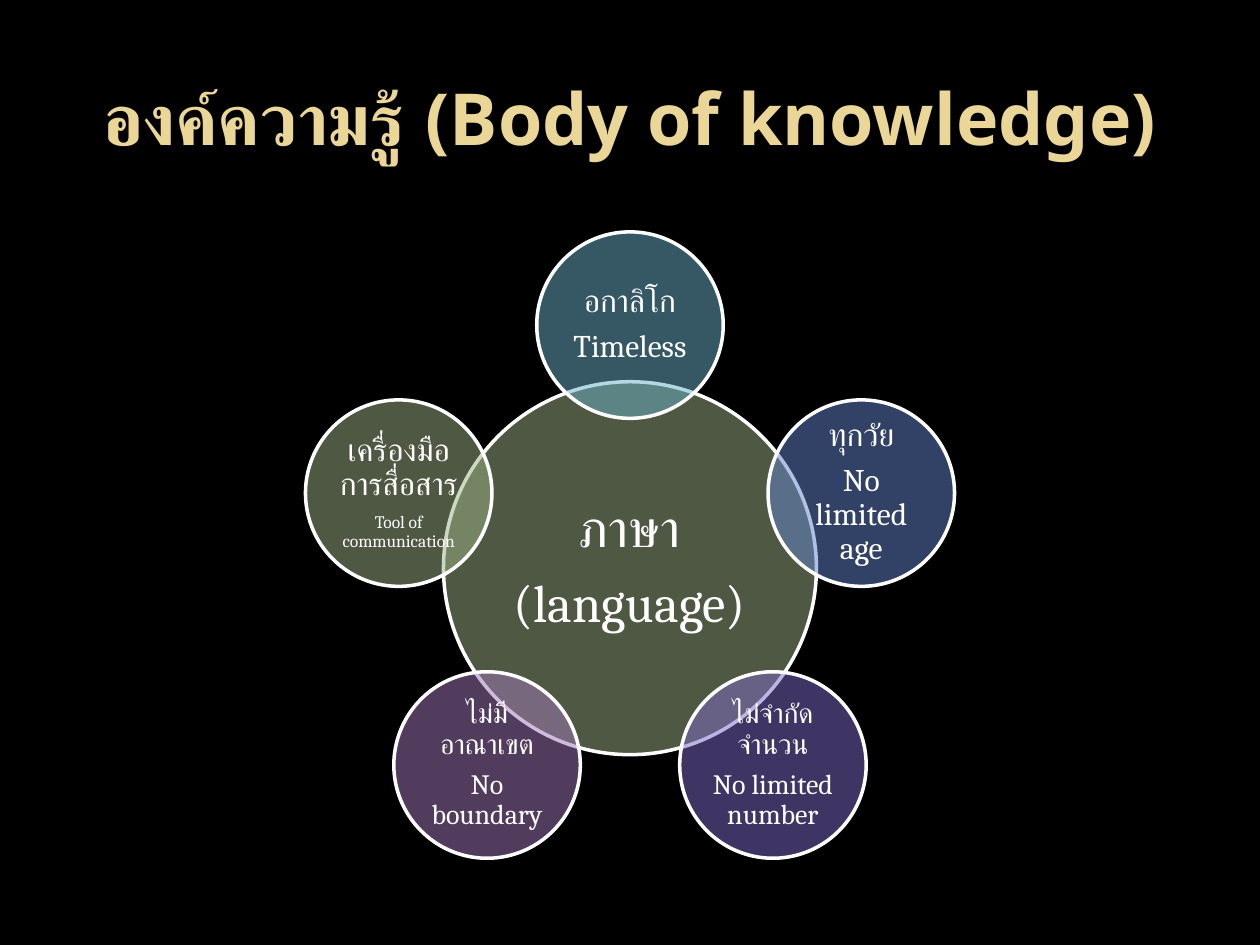
"""Build a slide with a radial Venn diagram of five qualities around language."""
import math

import pptx
import pptx.dml.color
import pptx.enum.shapes
import pptx.enum.text
import pptx.oxml.ns
import pptx.util
from lxml import etree


def color(hex_value):
    return pptx.dml.color.RGBColor.from_string(hex_value)


def write(para, text, *, size, font="Cambria", hex_value="FFFFFF", bold=False):
    para.alignment = pptx.enum.text.PP_ALIGN.CENTER
    span = para.add_run()
    span.text = text
    span.font.size = pptx.util.Pt(size)
    span.font.name = font
    span.font.bold = bold
    span.font.color.rgb = color(hex_value)


deck = pptx.Presentation()
deck.slide_width = pptx.util.Inches(10)
deck.slide_height = pptx.util.Inches(7.5)
width, height = deck.slide_width, deck.slide_height

page = deck.slides.add_slide(deck.slide_layouts[5])
page.background.fill.solid()
page.background.fill.fore_color.rgb = color("000000")

title = page.shapes.title
title.left, title.top = int(width * 0.05), int(height * 0.04)
title.width, title.height = int(width * 0.9), pptx.util.Inches(1.25)
title.text_frame.vertical_anchor = pptx.enum.text.MSO_ANCHOR.MIDDLE
title.text_frame.auto_size = pptx.enum.text.MSO_AUTO_SIZE.NONE
write(title.text_frame.paragraphs[0], "องค์ความรู้ (Body of knowledge)",
      size=41, font="Noto Sans", hex_value="EAD696", bold=True)

center_x, center_y = 5, 4.51
hub_size, satellite_size, orbit = 2.96, 1.48, 1.93
hub = ("9CB084", 0.04, [("ภาษา", 30), ("(language)", 30)])
satellites = [
    ("6BB1C9", 0.03, [("อกาลิโก", 18), ("Timeless", 18)]),
    ("6585CF", 0.03, [("ทุกวัย", 18), ("No limited age", 18)]),
    ("7E6BC9", 0.02, [("ไม่จำกัดจำนวน", 16), ("No limited number", 16)]),
    ("A379BB", 0.02, [("ไม่มีอาณาเขต", 16), ("No boundary", 16)]),
    ("9CB084", 0.03, [("เครื่องมือการสื่อสาร", 18), ("Tool of communication", 10)]),
]

circles = [(center_x, center_y, hub_size, *hub)]
for index, satellite in enumerate(satellites):
    angle = math.tau * index / len(satellites)
    circles.append((center_x + orbit * math.sin(angle),
                    center_y - orbit * math.cos(angle),
                    satellite_size, *satellite))

for middle_x, middle_y, size, hex_value, inset, lines in circles:
    circle = page.shapes.add_shape(
        pptx.enum.shapes.MSO_SHAPE.OVAL,
        pptx.util.Inches(middle_x - size / 2), pptx.util.Inches(middle_y - size / 2),
        pptx.util.Inches(size), pptx.util.Inches(size))
    circle.shadow.inherit = False
    circle.fill.solid()
    circle.fill.fore_color.rgb = color(hex_value)
    fill_color = circle.fill._xPr.find(".//" + pptx.oxml.ns.qn("a:srgbClr"))
    etree.SubElement(fill_color, pptx.oxml.ns.qn("a:alpha"), val="50000")
    circle.line.color.rgb = color("FFFFFF")
    circle.line.width = pptx.util.Pt(2)

    frame = circle.text_frame
    frame.word_wrap = True
    frame.vertical_anchor = pptx.enum.text.MSO_ANCHOR.MIDDLE
    frame.margin_left = frame.margin_right = pptx.util.Inches(inset)
    frame.margin_top = frame.margin_bottom = pptx.util.Inches(inset)
    for number, (text, points) in enumerate(lines):
        para = frame.add_paragraph() if number else frame.paragraphs[0]
        para.line_spacing = 0.9
        para.space_after = pptx.util.Pt(points * 0.35)
        write(para, text, size=points)

deck.save("out.pptx")
